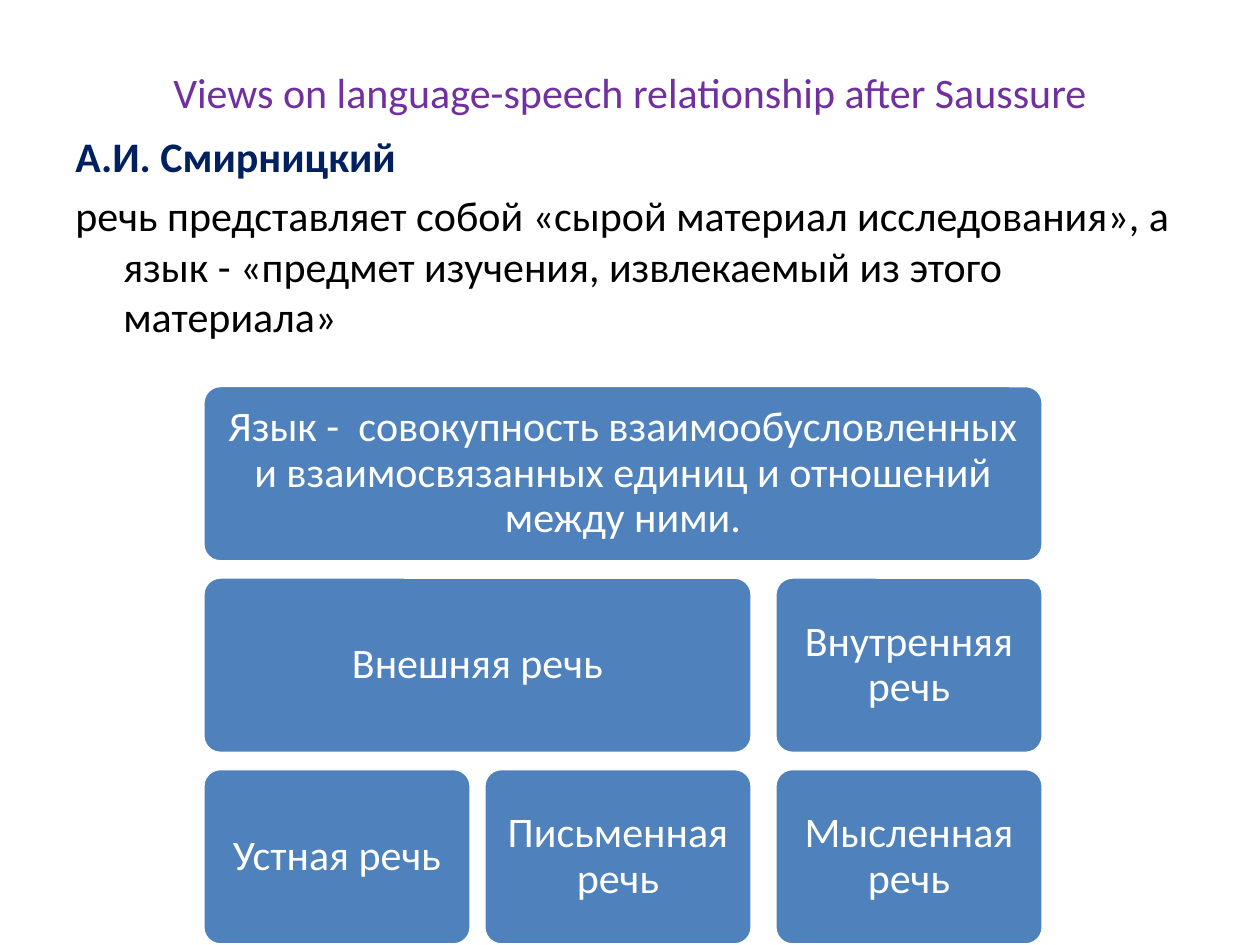
import pptx
import pptx.util
import pptx.dml.color
import pptx.enum.shapes
import pptx.enum.text

Inches = pptx.util.Inches
Pt = pptx.util.Pt
Align = pptx.enum.text.PP_ALIGN
Anchor = pptx.enum.text.MSO_ANCHOR

ROWS = [
    [("Язык -  совокупность взаимообусловленных и взаимосвязанных единиц и отношений между ними.", 0, 2)],
    [("Внешняя речь", 0, 1), ("Внутренняя речь", 2, 2)],
    [("Устная речь", 0, 0), ("Письменная речь", 1, 1), ("Мысленная речь", 2, 2)],
]


def color(value):
    return pptx.dml.color.RGBColor.from_string(value)


def style_para(para, ink, bold=False):
    for span in para.runs:
        span.font.name = "Calibri"
        span.font.size = Pt(24)
        span.font.bold = bold
        span.font.color.rgb = color(ink)


def add_text_box(page, left, top, width, height, anchor):
    box = page.shapes.add_textbox(Inches(left), Inches(top), Inches(width), Inches(height))
    box.text_frame.word_wrap = True
    box.text_frame.vertical_anchor = anchor
    return box.text_frame


def add_title(page, left, top, width, height):
    frame = add_text_box(page, left, top, width, height, Anchor.MIDDLE)
    frame.text = "Views on language-speech relationship after Saussure"
    frame.paragraphs[0].alignment = Align.CENTER
    style_para(frame.paragraphs[0], "7030A0")


def add_quote(page, left, top, width, height):
    frame = add_text_box(page, left, top, width, height, Anchor.TOP)
    frame.text = (
        "А.И. Смирницкий\n"
        "речь представляет собой «сырой материал исследования», а язык - "
        "«предмет изучения, извлекаемый из этого материала»"
    )
    author, quote = frame.paragraphs
    style_para(author, "002060", bold=True)
    style_para(quote, "000000")
    for para in frame.paragraphs:
        para.space_before = Pt(4.8)
        properties = para._p.get_or_add_pPr()
        properties.set("marL", str(Inches(0.38)))
        properties.set("indent", str(-Inches(0.38)))


def add_block(page, text, left, top, width, height):
    box = page.shapes.add_shape(
        pptx.enum.shapes.MSO_SHAPE.ROUNDED_RECTANGLE,
        Inches(left), Inches(top), Inches(width), Inches(height),
    )
    box.adjustments[0] = 0.1
    box.shadow.inherit = False
    box.fill.solid()
    box.fill.fore_color.rgb = color("4F81BD")
    box.line.color.rgb = color("FFFFFF")
    box.line.width = Pt(2)
    frame = box.text_frame
    frame.word_wrap = True
    frame.vertical_anchor = Anchor.MIDDLE
    frame.margin_left = frame.margin_right = Inches(0.06)
    frame.margin_top = frame.margin_bottom = Inches(0.06)
    frame.text = text
    para = frame.paragraphs[0]
    para.alignment = Align.CENTER
    para.line_spacing = 0.9
    style_para(para, "FFFFFF")


def add_hierarchy(page, left, top, width, height):
    inner_gap, outer_gap, row_gap = 0.1, 0.18, 0.12
    column = (width - inner_gap - outer_gap) / 3
    starts = [0, column + inner_gap, width - column]
    block_height = (height - 2 * row_gap) / 3
    for index, row in enumerate(ROWS):
        block_top = top + index * (block_height + row_gap)
        for text, first, last in row:
            block_width = starts[last] + column - starts[first]
            add_block(page, text, left + starts[first], block_top, block_width, block_height)


def main():
    deck = pptx.Presentation()
    deck.slide_width = Inches(10)
    deck.slide_height = Inches(7.5)
    page = deck.slides.add_slide(deck.slide_layouts[6])
    add_title(page, 0.5, 0.3, 9, 0.85)
    add_quote(page, 0.5, 0.99, 9.15, 6.06)
    add_hierarchy(page, 1.61, 3.06, 6.67, 4.44)
    deck.save("out.pptx")


if __name__ == "__main__":
    main()
